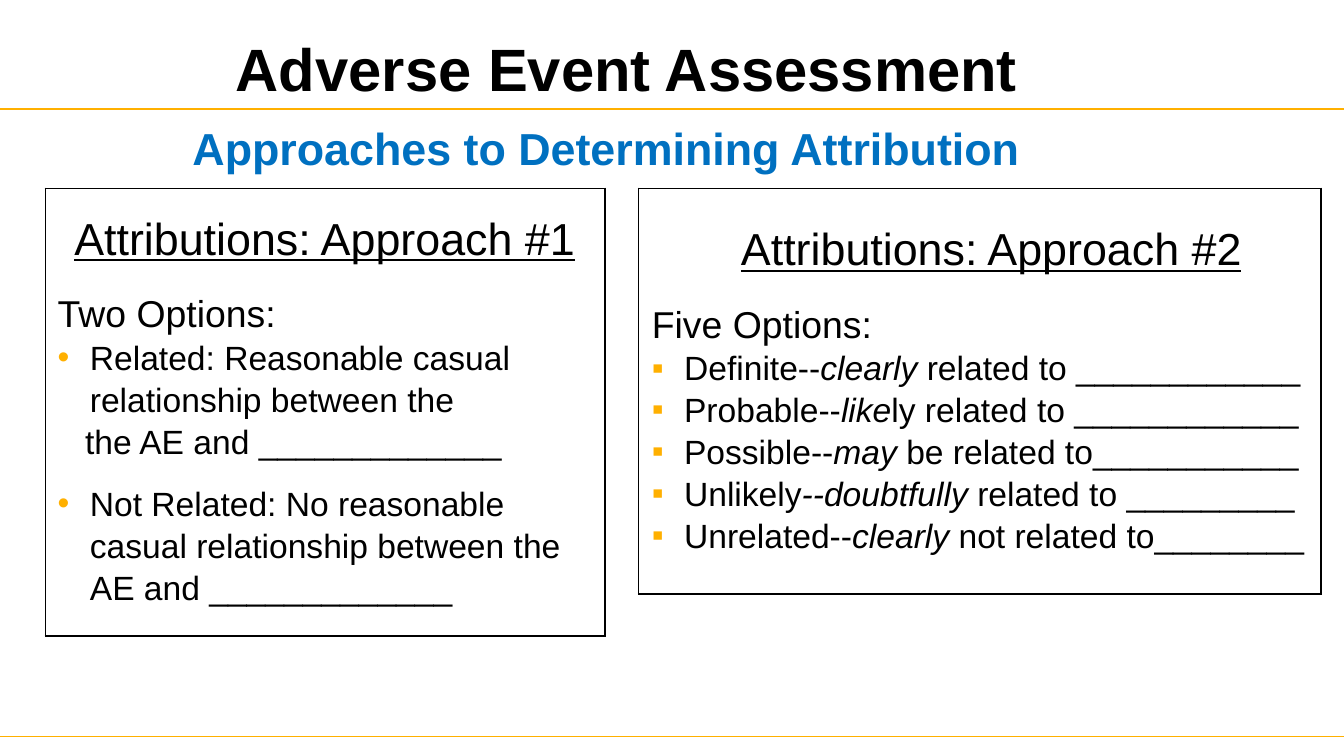
import lxml.etree
import pptx
import pptx.dml.color
import pptx.enum.shapes
import pptx.enum.text
import pptx.oxml.ns
import pptx.util

Cm = pptx.util.Cm
Pt = pptx.util.Pt
ALIGN = pptx.enum.text.PP_ALIGN
ANCHOR = pptx.enum.text.MSO_ANCHOR
COLORS = {"text": "000000", "accent": "FFB000", "subtitle": "0070C0"}
FONT = "Arial"
BULLET_INDENT = Cm(0.61)
qn = pptx.oxml.ns.qn


def rgb(name):
    return pptx.dml.color.RGBColor.from_string(COLORS[name])


def add_child(parent, tag, **attributes):
    return lxml.etree.SubElement(parent, qn(tag), attributes)


def write_paragraph(paragraph, text, size=18, color="text", bold=False, underline=False,
                    align=ALIGN.LEFT, before=0, line_spacing=1.0, bullet=None, indent=0):
    """Fill a paragraph; every second part of the text between * marks is italic."""
    paragraph.alignment = align
    paragraph.space_before = Pt(before)
    paragraph.line_spacing = line_spacing
    properties = paragraph._p.get_or_add_pPr()
    if bullet:
        properties.set("marL", str(BULLET_INDENT))
        properties.set("indent", str(-BULLET_INDENT))
        bullet_color = add_child(properties, "a:buClr")
        add_child(bullet_color, "a:srgbClr", val=COLORS["accent"])
        add_child(properties, "a:buFont", typeface=FONT)
        add_child(properties, "a:buChar", char=bullet)
    elif indent:
        properties.set("marL", str(indent))
    for index, part in enumerate(text.split("*")):
        run = paragraph.add_run()
        run.text = part
        run.font.name = FONT
        run.font.size = Pt(size)
        run.font.bold = bold
        run.font.underline = underline
        run.font.italic = index % 2 == 1
        run.font.color.rgb = rgb(color)


class SlideBuilder:
    def __init__(self, slide):
        self.slide = slide

    def rule(self, top):
        line = self.slide.shapes.add_connector(
            pptx.enum.shapes.MSO_CONNECTOR.STRAIGHT, 0, Cm(top), Cm(25.4), Cm(top))
        line.line.color.rgb = rgb("accent")
        line.line.width = Pt(1)
        add_child(line._element.spPr, "a:effectLst")

    def text_box(self, left, top, width, height, paragraphs,
                 anchor=ANCHOR.TOP, margin_top=0.13):
        """Add a text box from a list of (text, format) pairs."""
        shape = self.slide.shapes.add_textbox(Cm(left), Cm(top), Cm(width), Cm(height))
        frame = shape.text_frame
        frame.word_wrap = True
        frame.vertical_anchor = anchor
        frame.margin_top = Cm(margin_top)
        for index, (text, style) in enumerate(paragraphs):
            paragraph = frame.add_paragraph() if index else frame.paragraphs[0]
            write_paragraph(paragraph, text, **style)

    def frame(self, left, top, width, height):
        """Add a one-cell table that shows only its border."""
        table = self.slide.shapes.add_table(
            1, 1, Cm(left), Cm(top), Cm(width), Cm(height)).table
        table.first_row = False
        table.horz_banding = False
        cell = table.cell(0, 0)
        cell.fill.background()
        properties = cell._tc.get_or_add_tcPr()
        for index, side in enumerate(("a:lnL", "a:lnR", "a:lnT", "a:lnB")):
            border = add_child(properties, side, w=str(Pt(1)))
            fill = add_child(border, "a:solidFill")
            add_child(fill, "a:srgbClr", val=COLORS["text"])
            properties.insert(index, border)


def main():
    presentation = pptx.Presentation()
    presentation.slide_width = Cm(25.4)
    presentation.slide_height = Cm(14.29)
    builder = SlideBuilder(presentation.slides.add_slide(presentation.slide_layouts[6]))

    for top in (2.06, 13.92):
        builder.rule(top)

    builder.text_box(0.1, 0.08, 23.5, 2.39, [
        ("Adverse Event Assessment", dict(size=32, bold=True, align=ALIGN.CENTER)),
    ], anchor=ANCHOR.MIDDLE)

    body = dict(line_spacing=1.04)
    heading = dict(body, size=24, underline=True, align=ALIGN.CENTER)
    options = dict(body, size=20, before=13)
    dot = dict(body, bullet="•")
    square = dict(body, bullet="▪")

    builder.text_box(0.84, 3.76, 10.59, 9.96, [
        ("Attributions: Approach #1", heading),
        ("Two Options:", options),
        ("Related: Reasonable casual relationship between the", dot),
        ("the AE and _____________", dict(body, indent=Cm(0.52))),
        ("Not Related: No reasonable casual relationship between the "
         "AE and _____________", dict(dot, before=11)),
    ], margin_top=0.18)

    likelihoods = (
        "Definite--*clearly* related to ____________",
        "Probable--*like*ly related to ____________",
        "Possible--*may *be related to___________",
        "Unlikely*--doubtfully* related to _________",
        "Unrelated--*clearly *not related to________",
    )
    builder.text_box(12.07, 3.96, 13.33, 9.73, [
        ("Attributions: Approach #2", heading),
        ("Five Options:", options),
        *((text, square) for text in likelihoods),
    ], margin_top=0.18)

    builder.text_box(0.51, 2.06, 22.12, 1.47, [
        ("Approaches to Determining Attribution ",
         dict(size=24, color="subtitle", bold=True, align=ALIGN.CENTER)),
    ], anchor=ANCHOR.MIDDLE)

    builder.frame(0.86, 3.56, 10.57, 8.46)
    builder.frame(12.07, 3.56, 12.9, 7.67)

    presentation.save("out.pptx")


if __name__ == "__main__":
    main()
